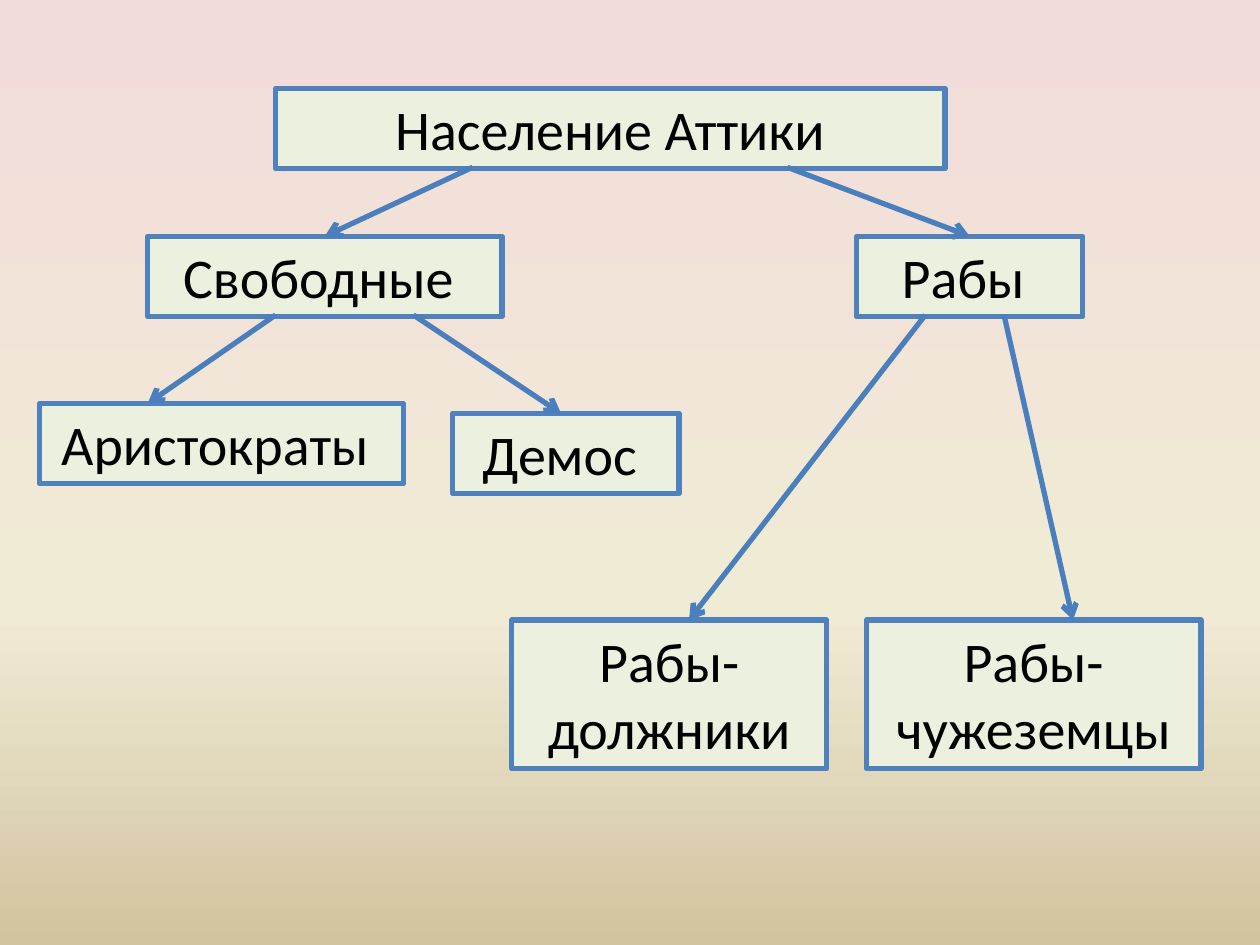
import copy

import pptx
import pptx.dml.color
import pptx.enum.shapes
import pptx.enum.text
import pptx.oxml
import pptx.oxml.ns
import pptx.util

qn = pptx.oxml.ns.qn

SLIDE_WIDTH = pptx.util.Inches(10)
SLIDE_HEIGHT = pptx.util.Inches(7.5)
CELL = SLIDE_WIDTH / 128  # square grid, 128 columns by 96 rows
LINE_ROWS = {1: 8.15, 2: 15.1}  # box height by number of text lines
BRANCH_ROWS = 8  # distance from the top of a box to its branches

# text, column, row, columns wide, text lines
GROUPS = [
    ("Население Аттики", 28, 9, 68, 1),
    ("Свободные ", 15, 24, 36, 1),
    ("Рабы ", 87, 24, 23, 1),
    ("Аристократы ", 4, 41, 37, 1),
    ("Демос ", 46, 42, 23, 1),
    ("Рабы-чужеземцы", 88, 63, 34, 2),
    ("Рабы-должники", 52, 63, 32, 2),
]

# row of the parent box, then (start column, end column, end row) of each branch
BRANCHES = [
    (9, [(48, 33, 24), (80, 98.5, 24)]),
    (24, [(28, 15, 41), (42, 57, 42), (94, 70, 63), (102, 109, 63)]),
]


def cells(count):
    return pptx.util.Emu(round(count * CELL))


def color(hex_value):
    return pptx.dml.color.RGBColor.from_string(hex_value)


def paint_background(slide, gradient):
    """Fill the background from top to bottom with (percent, colour) stops."""
    fill = slide.background.fill
    fill.gradient()
    fill.gradient_angle = 270
    stop_list = slide.element.find(".//" + qn("a:gsLst"))
    for _ in range(len(gradient) - len(stop_list)):
        stop_list.append(copy.deepcopy(stop_list[-1]))
    for stop, (percent, hex_value) in zip(fill.gradient_stops, gradient):
        stop.position = percent / 100
        stop.color.rgb = color(hex_value)


def add_group(slide, label, column, row, columns, lines):
    group = slide.shapes.add_shape(
        pptx.enum.shapes.MSO_SHAPE.RECTANGLE,
        cells(column), cells(row), cells(columns), cells(LINE_ROWS[lines]))
    group.shadow.inherit = False
    group.fill.solid()
    group.fill.fore_color.rgb = color("EBF1DE")
    group.line.color.rgb = color("4F81BD")
    group.line.width = pptx.util.Pt(3)

    frame = group.text_frame
    frame.text = label
    frame.word_wrap = True
    frame.auto_size = pptx.enum.text.MSO_AUTO_SIZE.SHAPE_TO_FIT_TEXT
    frame.vertical_anchor = pptx.enum.text.MSO_ANCHOR.TOP
    paragraph = frame.paragraphs[0]
    paragraph.alignment = pptx.enum.text.PP_ALIGN.CENTER
    font = paragraph.runs[0].font
    font.name = "Calibri"
    font.size = pptx.util.Pt(32)
    font.color.rgb = color("000000")


def add_branch(slide, start, end):
    """Draw an arrow between two (column, row) points."""
    branch = slide.shapes.add_connector(
        pptx.enum.shapes.MSO_CONNECTOR.STRAIGHT,
        *(cells(count) for count in start + end))
    branch.line.color.rgb = color("4B7EBC")
    branch.line.width = pptx.util.Pt(3)
    properties = branch.element.spPr
    outline = properties.find(qn("a:ln"))
    arrowhead = pptx.oxml.ns.qn("a:tailEnd")
    outline.append(outline.makeelement(arrowhead, {"type": "arrow"}))
    properties.append(properties.makeelement(qn("a:effectLst"), {}))


def build_population_tree(slide):
    for group in GROUPS:
        add_group(slide, *group)
    for parent_row, children in BRANCHES:
        for start_column, end_column, end_row in children:
            add_branch(slide, (start_column, parent_row + BRANCH_ROWS),
                       (end_column, end_row))


def main():
    presentation = pptx.Presentation()
    presentation.slide_width = SLIDE_WIDTH
    presentation.slide_height = SLIDE_HEIGHT
    slide = presentation.slides.add_slide(presentation.slide_layouts[6])
    paint_background(slide, [(0, "F2DCDB"), (65, "F0EBD5"), (100, "D1C39F")])
    build_population_tree(slide)
    presentation.save("out.pptx")


if __name__ == "__main__":
    main()
